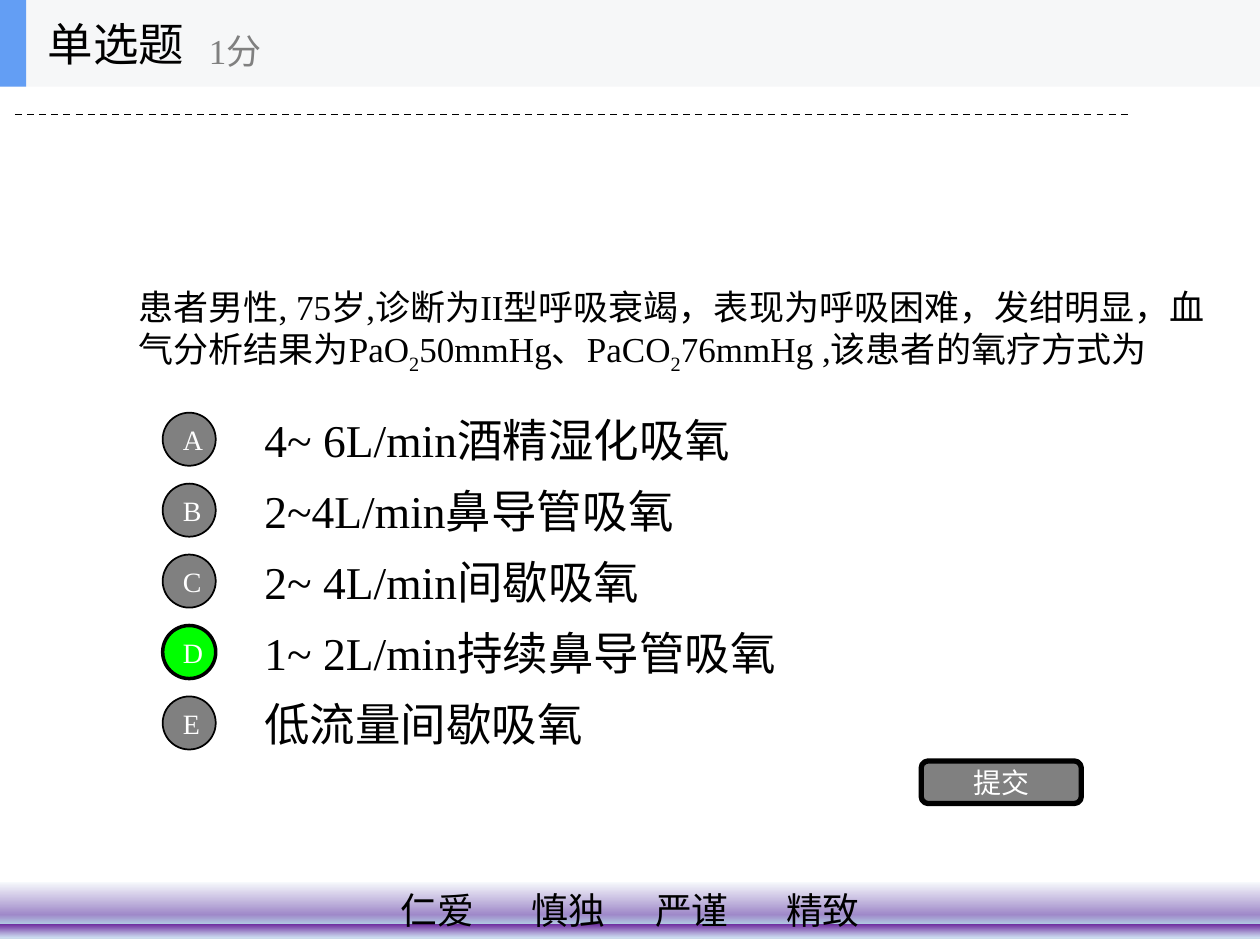
from lxml.etree import SubElement
from pptx import Presentation
from pptx.dml.color import RGBColor
from pptx.enum.dml import MSO_LINE
from pptx.enum.shapes import MSO_CONNECTOR as Connector, MSO_SHAPE as Shape
from pptx.enum.text import MSO_ANCHOR as Anchor, MSO_AUTO_SIZE as AutoSize, PP_ALIGN as Align
from pptx.oxml.ns import qn
from pptx.util import Cm, Pt

BLACK = RGBColor(0x00, 0x00, 0x00)
WHITE = RGBColor(0xFF, 0xFF, 0xFF)
GRAY = RGBColor(0x80, 0x80, 0x80)
GREEN = RGBColor(0x00, 0xFF, 0x00)
HEADER_GRAY = RGBColor(0xF6, 0xF7, 0xF8)
HEADER_BLUE = RGBColor(0x63, 0x9E, 0xF4)
FOOTER_STOPS = [
    (0, RGBColor(0xF6, 0xF9, 0xFC)), (58, RGBColor(0x9F, 0x89, 0xC9)),
    (74, RGBColor(0xB0, 0xC6, 0xE1)), (75, RGBColor(0x70, 0x30, 0xA0)),
    (93, RGBColor(0xB7, 0xB5, 0xDE)), (96, RGBColor(0xC3, 0xCB, 0xE8)),
    (98, RGBColor(0xC9, 0xD6, 0xED)), (99, RGBColor(0xCD, 0xDF, 0xF1)),
    (100, RGBColor(0xCA, 0xD9, 0xEB)),
]

TEXT_FONT = "Times New Roman"
FOOTER_FONT = "Noto Sans CJK SC"
SLIDE_WIDTH, HEADER_HEIGHT = 25.4, 1.75

# Each part is its text and whether it is a subscript.
QUESTION = [
    ("患者男性, 75岁,诊断为II型呼吸衰竭，表现为呼吸困难，发绀明显，血气分析结果为PaO", False),
    ("2", True),
    ("50mmHg、PaCO", False),
    ("2", True),
    ("76mmHg ,该患者的氧疗方式为", False),
]
OPTIONS = [
    ("A", "4~ 6L/min酒精湿化吸氧"),
    ("B", "2~4L/min鼻导管吸氧"),
    ("C", "2~ 4L/min间歇吸氧"),
    ("D", "1~ 2L/min持续鼻导管吸氧"),
    ("E", "低流量间歇吸氧"),
]
ANSWER = "D"
OPTION_TOP, OPTION_PITCH = 8.18, 1.43
MOTTO = ["仁爱", "慎独", "严谨", "精致"]
MOTTO_LEFT, MOTTO_TABS = 8.08, [2.64, 5.13, 7.77]


def place(shape, left, top, width, height):
    shape.left, shape.top = Cm(left), Cm(top)
    shape.width, shape.height = Cm(width), Cm(height)


def format_text(shape, size, color, align=Align.LEFT, font_name=TEXT_FONT):
    frame = shape.text_frame
    frame.word_wrap = True
    frame.auto_size = AutoSize.NONE
    frame.vertical_anchor = Anchor.MIDDLE
    paragraph = frame.paragraphs[0]
    paragraph.alignment = align
    paragraph.font.name = font_name
    paragraph.font.size = Pt(size)
    paragraph.font.color.rgb = color


def add_text(slide, box, text, size, color=BLACK):
    text_box = slide.shapes.add_textbox(*map(Cm, box))
    text_box.text_frame.text = text
    format_text(text_box, size, color)
    return text_box


def add_block(slide, kind, box, fill=None, line_width=0):
    """Add a shape without shadow; a line width of 0 means no outline."""
    shape = slide.shapes.add_shape(kind, *map(Cm, box))
    shape.shadow.inherit = False
    if fill is not None:
        shape.fill.solid()
        shape.fill.fore_color.rgb = fill
    if line_width:
        shape.line.color.rgb = BLACK
        shape.line.width = Pt(line_width)
    else:
        shape.line.fill.background()
    return shape


def add_button(slide, kind, box, text, fill, line_width):
    button = add_block(slide, kind, box, fill, line_width)
    button.text_frame.text = text
    format_text(button, 16, WHITE, Align.CENTER)


def fill_gradient(shape, stops):
    """Fill from top to bottom with (percent, color) stops."""
    shape.fill.gradient()
    shape.fill.gradient_angle = 270
    stop_list = shape._element.spPr.find(qn("a:gradFill")).find(qn("a:gsLst"))
    for old_stop in list(stop_list):
        stop_list.remove(old_stop)
    for percent, color in stops:
        stop = SubElement(stop_list, qn("a:gs"), pos=str(percent * 1000))
        SubElement(stop, qn("a:srgbClr"), val=str(color))


def add_footer(slide):
    footer = add_block(slide, Shape.RECTANGLE, (0, 17.78, SLIDE_WIDTH, 1.14))
    fill_gradient(footer, FOOTER_STOPS)
    frame = footer.text_frame
    frame.margin_left = Cm(MOTTO_LEFT)
    frame.margin_right = frame.margin_top = frame.margin_bottom = 0
    frame.text = "\t".join(MOTTO)
    properties = frame.paragraphs[0]._p.get_or_add_pPr()
    tab_list = SubElement(properties, qn("a:tabLst"))
    for position in MOTTO_TABS:
        SubElement(tab_list, qn("a:tab"), pos=str(Cm(position)), algn="l")
    format_text(footer, 21, BLACK, font_name=FOOTER_FONT)


def add_dashed_line(slide):
    line = slide.shapes.add_connector(
        Connector.STRAIGHT, Cm(0.3), Cm(2.31), Cm(22.83), Cm(2.31))
    line.line.color.rgb = BLACK
    line.line.width = Pt(1)
    line.line.dash_style = MSO_LINE.DASH
    SubElement(line._element.spPr, qn("a:effectLst"))


def add_question(slide):
    text_box = add_text(slide, (2.54, 4.42, 22.25, 4.47), "", 20)
    paragraph = text_box.text_frame.paragraphs[0]
    for text, is_subscript in QUESTION:
        run = paragraph.add_run()
        run.text = text
        if is_subscript:
            run._r.get_or_add_rPr().set("baseline", "-25000")


def add_options(slide):
    for row, (letter, text) in enumerate(OPTIONS):
        top = OPTION_TOP + row * OPTION_PITCH
        add_text(slide, (5.08, top, 17.78, 1.35), text, 26)
        fill, line_width = (GREEN, 2) if letter == ANSWER else (GRAY, 1)
        add_button(slide, Shape.OVAL, (3.28, top + 0.14, 1.07, 1.07),
                   letter, fill, line_width)


def add_header(slide):
    add_block(slide, Shape.RECTANGLE, (0, 0, SLIDE_WIDTH, HEADER_HEIGHT), HEADER_GRAY)
    add_block(slide, Shape.RECTANGLE, (0, 0, 0.53, HEADER_HEIGHT), HEADER_BLUE)
    title = slide.shapes.title
    title.text_frame.text = "单选题"
    place(title, 0.71, 0, 5.28, HEADER_HEIGHT)
    format_text(title, 26, BLACK)
    # The title placeholder comes first, so bring it in front of the band.
    slide.shapes._spTree.append(title._element)
    add_text(slide, (3.96, 0.3, 6.35, 1.42), "1分", 20, GRAY)


def main():
    presentation = Presentation()
    presentation.slide_width = Cm(SLIDE_WIDTH)
    presentation.slide_height = Cm(19.05)
    slide = presentation.slides.add_slide(presentation.slide_layouts[5])
    add_footer(slide)
    add_dashed_line(slide)
    add_question(slide)
    add_options(slide)
    add_button(slide, Shape.ROUNDED_RECTANGLE, (18.57, 15.34, 3.23, 0.86), "提交", GRAY, 3)
    add_header(slide)
    presentation.save("out.pptx")


if __name__ == "__main__":
    main()
